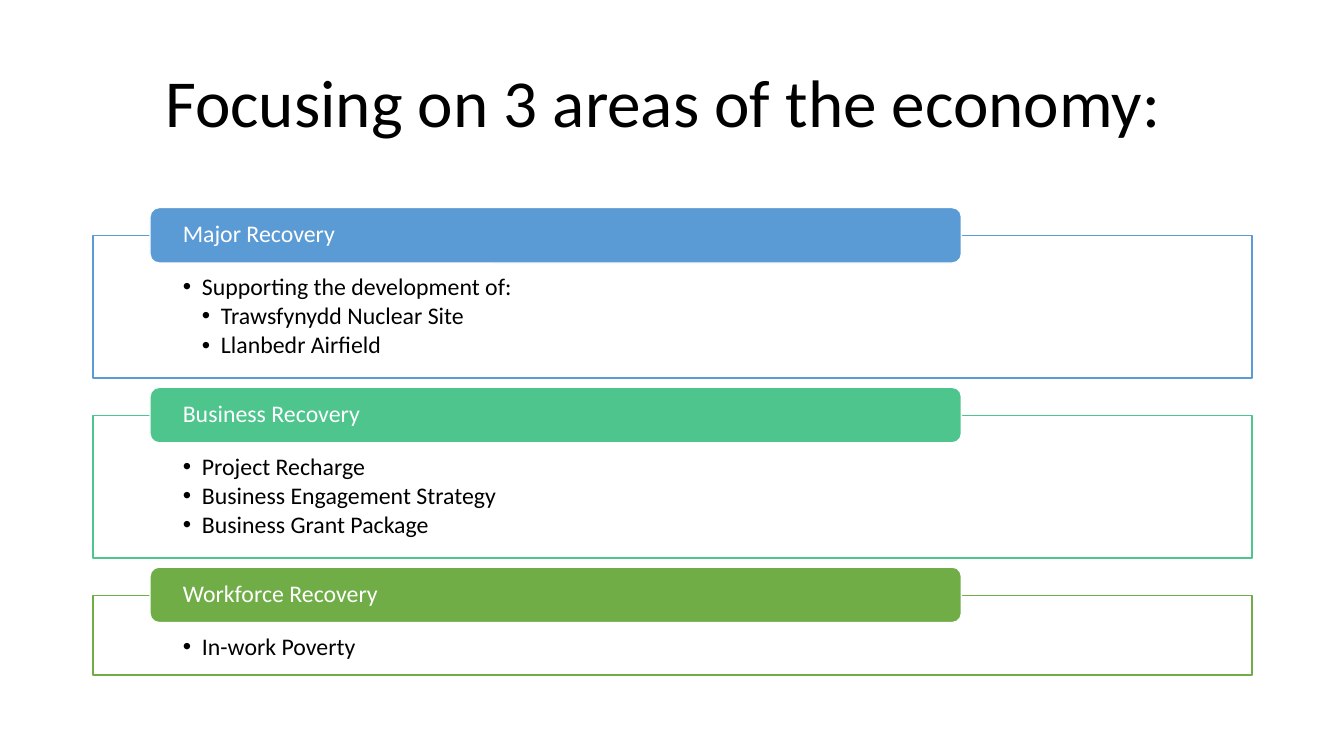
"""Build a slide listing three economic recovery areas in headed boxes."""
from lxml.etree import SubElement
from pptx import Presentation
from pptx.dml.color import RGBColor
from pptx.enum.shapes import MSO_SHAPE
from pptx.enum.text import MSO_ANCHOR, PP_ALIGN
from pptx.oxml.ns import qn
from pptx.util import Cm, Pt

FONT = "Calibri"
BLACK = RGBColor(0x00, 0x00, 0x00)
WHITE = RGBColor(0xFF, 0xFF, 0xFF)
BLUE = RGBColor(0x5B, 0x9B, 0xD5)
TEAL = RGBColor(0x4D, 0xC5, 0x8D)
GREEN = RGBColor(0x70, 0xAD, 0x47)

AREAS = [
    ("Major Recovery", BLUE, [
        (1, "Supporting the development of:"),
        (2, "Trawsfynydd Nuclear Site"),
        (2, "Llanbedr Airfield")]),
    ("Business Recovery", TEAL, [
        (1, "Project Recharge"),
        (1, "Business Engagement Strategy"),
        (1, "Business Grant Package")]),
    ("Workforce Recovery", GREEN, [
        (1, "In-work Poverty")]),
]


def add_panel(kind, left, top, width, height, fill, line, margins, anchor):
    s = slide.shapes.add_shape(kind, Cm(left), Cm(top), Cm(width), Cm(height))
    s.shadow.inherit = False
    s.fill.solid()
    s.fill.fore_color.rgb = fill
    s.line.color.rgb = line
    s.line.width = Pt(1)
    tf = s.text_frame
    tf.word_wrap = True
    tf.vertical_anchor = anchor
    side, upper, lower = margins
    tf.margin_left = tf.margin_right = Cm(side)
    tf.margin_top, tf.margin_bottom = Cm(upper), Cm(lower)
    return tf


def format_paragraph(p, size, color, align=PP_ALIGN.LEFT):
    p.alignment = align
    p.line_spacing = 0.9
    for r in p.runs:
        r.font.name = FONT
        r.font.size = Pt(size)
        r.font.color.rgb = color


prs = Presentation()
prs.slide_width, prs.slide_height = Cm(33.87), Cm(19.05)
slide = prs.slides.add_slide(prs.slide_layouts[5])

title = slide.shapes.title
title.left, title.top, title.width, title.height = Cm(3.58), Cm(1.37), Cm(26.26), Cm(2.31)
tf = title.text_frame
tf.text = "Focusing on 3 areas of the economy:"
tf.word_wrap = False
tf.vertical_anchor = MSO_ANCHOR.MIDDLE
format_paragraph(tf.paragraphs[0], 48, BLACK, PP_ALIGN.CENTER)
tf.paragraphs[0].line_spacing = 1.0

top = 5.94
for heading, color, items in AREAS:
    height = 1.22 + 0.79 * len(items)
    tf = add_panel(MSO_SHAPE.RECTANGLE, 2.34, top, 29.21, height,
                   WHITE, color, (2.27, 0.99, 0.33), MSO_ANCHOR.TOP)
    for i, (level, text) in enumerate(items):
        p = tf.add_paragraph() if i else tf.paragraphs[0]
        p.text = text
        p.level = level
        pPr = p._p.get_or_add_pPr()
        pPr.set("marL", str(Cm(0.48 * level)))
        pPr.set("indent", str(-Cm(0.48)))
        SubElement(pPr, qn("a:buFont"), typeface="Arial")
        SubElement(pPr, qn("a:buChar"), char="•")
        p.space_after = Pt(2.5)
        format_paragraph(p, 17, BLACK)

    tf = add_panel(MSO_SHAPE.ROUNDED_RECTANGLE, 3.78, top - 0.71, 20.45, 1.4,
                   color, WHITE, (0.76, 0, 0), MSO_ANCHOR.MIDDLE)
    tf.text = heading
    format_paragraph(tf.paragraphs[0], 17, WHITE)
    top += height + 0.94

prs.save("out.pptx")
